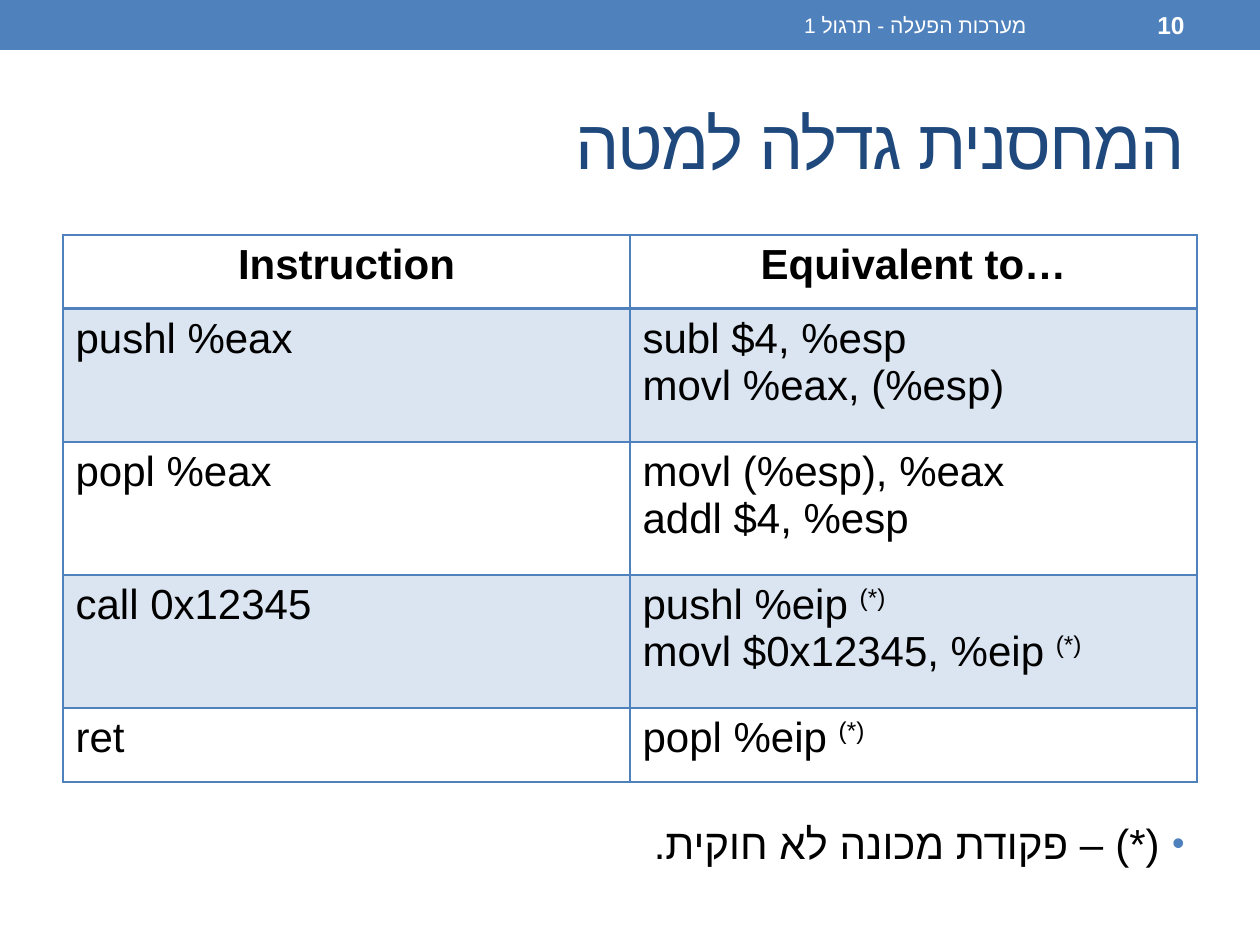
import pptx
import pptx.util
import pptx.dml.color
import pptx.enum.shapes
import pptx.enum.text
import pptx.oxml.ns
from lxml import etree

PX = 914400 / 126
FONT = "Arial"
BLUE, NAVY, BLACK, WHITE = "4F81BD", "1F497D", "000000", "FFFFFF"
STAR = "(*)"
ALIGN = pptx.enum.text.PP_ALIGN

HEADINGS = ["Instruction", "Equivalent to…"]
# Each cell is a list of paragraphs, each paragraph a list of runs.
ROWS = [
    ([["pushl %eax"]], [["subl $4, %esp"], ["movl %eax, (%esp)"]]),
    ([["popl %eax"]], [["movl (%esp), %eax ", "\n", "addl $4, %esp"]]),
    ([["call 0x12345"]],
     [["pushl %eip ", STAR, "\n", "movl $0x12345, %eip ", STAR]]),
    ([["ret"]], [["popl %eip ", STAR]]),
]


def px(n):
    return pptx.util.Emu(round(n * PX))


def rgb(value):
    return pptx.dml.color.RGBColor.from_string(value)


def sub(parent, tag, **attrs):
    el = etree.SubElement(parent, pptx.oxml.ns.qn(tag))
    for name, value in attrs.items():
        el.set(name, str(value))
    return el


def add_run(p, text, size, color, bold=False):
    r = p.add_run()
    r.text = text
    r.font.size = pptx.util.Pt(size)
    r.font.bold = bold
    r.font.name = FONT
    r.font.color.rgb = rgb(color)
    sub(r._r.get_or_add_rPr(), "a:cs", typeface=FONT)
    return r


def add_rtl_text(s, box, text, size, color, bold=False):
    """Add a vertically centred right-to-left line; return its paragraph and run."""
    tf = s.shapes.add_textbox(*map(px, box)).text_frame
    tf.word_wrap = True
    tf.vertical_anchor = pptx.enum.text.MSO_ANCHOR.MIDDLE
    p = tf.paragraphs[0]
    p.alignment = ALIGN.RIGHT
    p._p.get_or_add_pPr().set("rtl", "1")
    return p, add_run(p, text, size, color, bold)


def add_header(s, x, y, w, h):
    sp = s.shapes.add_shape(pptx.enum.shapes.MSO_SHAPE.RECTANGLE,
                            px(x), px(y), px(w), px(h))
    sp.shadow.inherit = False
    sp.fill.solid()
    sp.fill.fore_color.rgb = rgb(BLUE)
    sp.line.fill.background()
    add_rtl_text(s, (x + 472, y + 2, 567, h - 4),
                 "מערכות הפעלה - תרגול 1", 12, WHITE)
    add_rtl_text(s, (x + 1050, y + 2, 147, h - 4), "10", 14, WHITE, True)


def add_title(s, *box):
    p, r = add_rtl_text(s, box, "המחסנית גדלה למטה", 40, NAVY)
    r._r.get_or_add_rPr().set("spc", "-100")


def style_cell(cell, heading, shaded):
    tcPr = cell._tc.get_or_add_tcPr()
    for side in "LRTB":
        width = 2 if heading and side == "B" else 1
        ln = sub(tcPr, f"a:ln{side}", w=pptx.util.Pt(width))
        sub(sub(ln, "a:solidFill"), "a:srgbClr", val=BLUE)
    if shaded:
        sub(sub(sub(tcPr, "a:solidFill"), "a:srgbClr", val=BLUE),
            "a:alpha", val=20000)
    else:
        cell.fill.background()


def fill_cell(cell, paragraphs, heading):
    tf = cell.text_frame
    for i, runs in enumerate(paragraphs):
        p = tf.add_paragraph() if i else tf.paragraphs[0]
        p.alignment = ALIGN.CENTER if heading else ALIGN.LEFT
        for text in runs:
            if text == "\n":
                p.add_line_break()
                continue
            r = add_run(p, text, 24, BLACK, heading)
            if text == STAR:
                r._r.get_or_add_rPr().set("baseline", "30000")


def add_instruction_table(s, x, y, w, heights):
    rows = [[[[text]] for text in HEADINGS], *ROWS]
    table = s.shapes.add_table(len(rows), 2, px(x), px(y), px(w),
                               px(sum(heights))).table
    table.horz_banding = False
    for col in table.columns:
        col.width = px(w // 2)
    for i, (cells, height) in enumerate(zip(rows, heights)):
        table.rows[i].height = px(height)
        for j, paragraphs in enumerate(cells):
            cell = table.cell(i, j)
            style_cell(cell, i == 0, i % 2 == 1)
            fill_cell(cell, paragraphs, i == 0)


def add_footnote(s, *box):
    p, r = add_rtl_text(s, box, "(*) – פקודת מכונה לא חוקית.", 24, BLACK)
    pPr = p._p.get_or_add_pPr()
    indent = px(25)
    pPr.set("marL", str(indent))
    pPr.set("indent", str(-indent))
    sub(sub(pPr, "a:buClr"), "a:srgbClr", val=BLUE)
    sub(pPr, "a:buSzPct", val=85000)
    sub(pPr, "a:buFont", typeface=FONT)
    sub(pPr, "a:buChar", char="•")


def main():
    prs = pptx.Presentation()
    prs.slide_width, prs.slide_height = px(1260), px(945)
    s = prs.slides.add_slide(prs.slide_layouts[6])
    add_header(s, 0, 0, 1260, 50)
    add_title(s, 63, 73, 1134, 136)
    add_instruction_table(s, 63, 235, 1134, [74, 133, 133, 133, 74])
    add_footnote(s, 63, 813, 1134, 60)
    prs.save("out.pptx")


if __name__ == "__main__":
    main()
